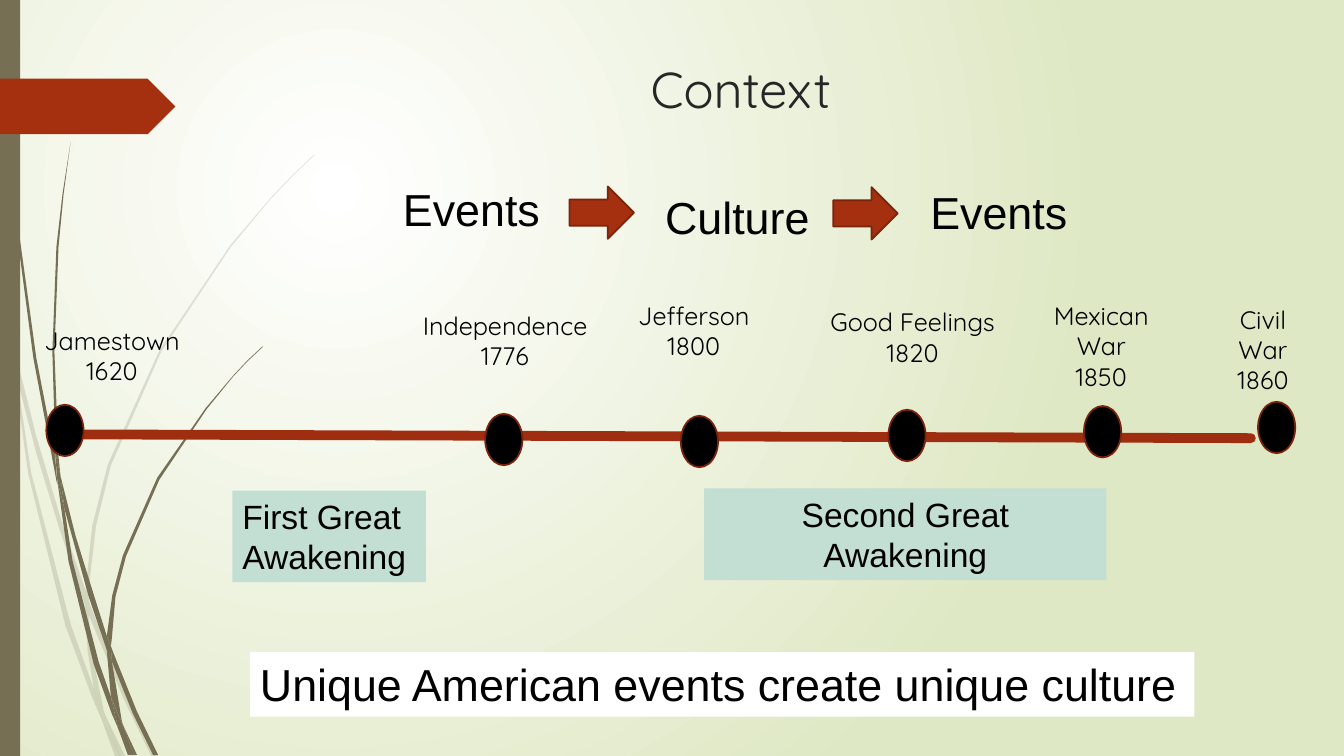
from dataclasses import dataclass

from lxml import etree
from pptx import Presentation
from pptx.dml.color import RGBColor
from pptx.enum.shapes import MSO_CONNECTOR, MSO_SHAPE
from pptx.enum.text import MSO_ANCHOR, MSO_AUTO_SIZE, PP_ALIGN
from pptx.oxml.ns import qn
from pptx.util import Pt

STRAIGHT = MSO_CONNECTOR.STRAIGHT
RECT, OVAL = MSO_SHAPE.RECTANGLE, MSO_SHAPE.OVAL
ARROW, TAG = MSO_SHAPE.RIGHT_ARROW, MSO_SHAPE.PENTAGON
LEFT, CENTER = PP_ALIGN.LEFT, PP_ALIGN.CENTER
TOP = MSO_ANCHOR.TOP
GROW, FIXED = MSO_AUTO_SIZE.SHAPE_TO_FIT_TEXT, MSO_AUTO_SIZE.NONE


@dataclass(frozen=True)
class Theme:
    heading: str = "Quicksand"
    body: str = "Arial"
    title_size: int = 36
    big_size: int = 32
    note_size: int = 24
    label_size: int = 18
    white: str = "FFFFFF"
    black: str = "000000"
    title: str = "262626"
    meadow: str = "DFE8C4"
    stem: str = "766F54"
    rust: str = "A53010"
    axis: str = "9E2E0F"
    edge: str = "7A240C"
    mint: str = "C3DED3"


class Canvas:
    def __init__(self, slide, theme):
        self.s = slide
        self.theme = theme

    def background(self, inner, outer):
        fill = self.s.background.fill
        fill.gradient()
        for stop, color in zip(fill.gradient_stops, (inner, outer)):
            stop.color.rgb = RGBColor.from_string(color)
        lin = self.s._element.find(".//" + qn("a:lin"))
        radial = etree.Element(qn("a:path"), path="circle")
        etree.SubElement(radial, qn("a:fillToRect"), l="50000", t="50000", r="100000", b="100000")
        lin.getparent().replace(lin, radial)

    def paint(self, sp, fill, line=None, width=1.25):
        sp.shadow.inherit = False
        sp.fill.solid()
        sp.fill.fore_color.rgb = RGBColor.from_string(fill)
        if line:
            sp.line.color.rgb = RGBColor.from_string(line)
            sp.line.width = Pt(width)
        else:
            sp.line.fill.background()

    def shape(self, kind, x, y, w, h, fill, line=None):
        sp = self.s.shapes.add_shape(kind, Pt(x), Pt(y), Pt(w), Pt(h))
        self.paint(sp, fill, line)

    def blade(self, outline, alpha=None):
        points = [(Pt(x), Pt(y)) for x, y in outline]
        builder = self.s.shapes.build_freeform(*points[0])
        builder.add_line_segments(points[1:], close=True)
        sp = builder.convert_to_shape()
        self.paint(sp, self.theme.stem)
        if alpha:
            clr = sp._element.spPr.find(".//" + qn("a:srgbClr"))
            etree.SubElement(clr, qn("a:alpha"), val=str(alpha * 1000))

    def line(self, x1, y1, x2, y2, color, width):
        cn = self.s.shapes.add_connector(STRAIGHT, Pt(x1), Pt(y1), Pt(x2), Pt(y2))
        cn.line.color.rgb = RGBColor.from_string(color)
        cn.line.width = Pt(width)
        spPr = cn._element.spPr
        spPr.find(qn("a:ln")).set("cap", "rnd")
        etree.SubElement(spPr, qn("a:effectLst"))

    def text(self, x, y, w, h, lines, size, font, align=LEFT, color=None, fill=None,
             wrap=False, fit=GROW):
        sp = self.s.shapes.add_textbox(Pt(x), Pt(y), Pt(w), Pt(h))
        if fill:
            self.paint(sp, fill)
        tf = sp.text_frame
        tf.word_wrap = wrap
        tf.auto_size = fit
        tf.vertical_anchor = TOP
        for i, line in enumerate(lines):
            p = tf.add_paragraph() if i else tf.paragraphs[0]
            p.alignment = align
            r = p.add_run()
            r.text = line
            r.font.name = font
            r.font.size = Pt(size)
            r.font.color.rgb = RGBColor.from_string(color or self.theme.black)


FAINT_BLADES = [
    [(7.9, 252), (6.5, 231.8), (0, 203), (0, 215.3), (7.2, 247.7)],
    [(41.8, 375.8), (60.5, 431.3), (61.2, 421.9), (44.6, 374.4), (26, 312), (10.1, 248.4),
     (12.2, 270.7), (25.9, 323.6)],
    [(66.2, 437), (63.4, 429.1), (63.4, 439.2), (88.6, 499.7), (108, 540), (111.6, 540), (91.4, 498.2)],
    [(85.7, 540), (89.3, 540), (75.6, 511.9)],
    [(67, 491.8), (50.4, 445.7), (22.3, 337.7), (12.2, 270.7), (7.9, 252), (20.2, 338.4),
     (46.8, 447.1), (66.2, 499), (72.7, 514.1), (71.3, 509)],
    [(60.5, 431.3), (62.6, 465.1), (67, 491.8), (69.1, 498.2), (75.6, 511.9), (74.2, 508.3),
     (65.5, 465.1), (63.4, 439.2), (63.4, 437.8)],
    [(63.4, 420.5), (68.6, 375.7), (79.2, 332.6), (115.2, 251.3), (164.9, 176.4), (193, 142.6),
     (208.8, 126), (224.6, 110.9), (224.6, 110.2), (208.1, 126), (193, 141.8), (164.2, 175.7),
     (113.8, 250.6), (77, 331.9), (65.9, 375.7), (61.2, 420.5), (61.2, 421.9), (63.4, 429.1)],
    [(72.7, 514.1), (82.1, 540), (85.7, 540)],
    [(63.4, 437.8), (63.4, 439.2), (63.4, 429.1), (61.2, 421.9), (60.5, 431.3)],
    [(69.1, 498.2), (67, 491.8), (71.3, 509), (72.7, 514.1), (85.7, 540), (75.6, 511.9)],
]
DARK_BLADES = [
    [(5, 79.2), (12.2, 167.8), (23.8, 255.6), (40.3, 343.4), (41, 346.3), (39.6, 329), (39.6, 326.2),
     (25.9, 255.6), (13.7, 167), (5.8, 78.5), (3.6, 34.6), (2.9, 0), (2.2, 0), (2.9, 34.6)],
    [(63.4, 426.2), (76.3, 464.4), (76.3, 455.8), (76.3, 454.3), (67, 424.8), (54, 382.9),
     (43.2, 339.8), (46.1, 363.6)],
    [(81.4, 467.3), (79.2, 461.5), (79.9, 472.3), (95, 509.8), (109.4, 539.3), (113, 539.3), (97.9, 508.3)],
    [(79.2, 497.5), (70.6, 473), (51.8, 400.3), (46.1, 363.6), (41, 343.4), (49, 401),
     (67, 474.5), (79.9, 509.8), (84.2, 519.8), (83.5, 516.2)],
    [(43.2, 339.8), (41.8, 326.2), (38.9, 251.3), (41.8, 176.4), (45.4, 139), (50.4, 101.5),
     (44.6, 139), (40.3, 176.4), (37.4, 251.3), (39.6, 323.3)],
    [(95.8, 539.3), (97.9, 539.3), (87.8, 517.7)],
    [(41, 343.4), (46.1, 363.6), (43.2, 339.8), (39.6, 323.3), (39.6, 326.2)],
    [(79.9, 455.8), (82.5, 426.2), (90, 397.4), (113.8, 342.7), (147.6, 292.3), (166.3, 269.3),
     (176.4, 258.5), (187.9, 247.7), (187.2, 247.7), (176.4, 257.8), (166.3, 268.6), (146.9, 291.6),
     (112.3, 341.3), (87.8, 396.7), (80.2, 425.3), (76.3, 454.3), (79.2, 461.5)],
    [(84.2, 519.8), (91.4, 539.3), (94.3, 539.3)],
    [(76.3, 464.4), (79.2, 497.5), (83.5, 508.3), (87.8, 517.7), (87.1, 515.5), (79.9, 472.3), (78.5, 468.7)],
    [(76.3, 464.4), (78.5, 468.7), (79.9, 472.3), (79.2, 461.5), (76.3, 454.3), (76.3, 455.8)],
    [(83.5, 508.3), (79.2, 497.5), (83.5, 516.2), (84.2, 519.8), (93.6, 539.3), (95.8, 539.3), (87.8, 517.7)],
]
MILESTONES = [
    (["Jamestown", "1620"], 22, 228.6, 115.9, 33.1, 289.1),
    (["Independence", "1776"], 286.6, 218.2, 148.3, 346.6, 295.6),
    (["Jefferson", "1800"], 445.6, 211, 100, 486.3, 297),
    (["Good Feelings", "1820"], 581, 215.6, 141.8, 634.6, 292.7),
    (["Mexican", "War", "1850"], 741.3, 211, 90.7, 774.3, 290),
    (["Civil", "War", "1860"], 874.8, 213.8, 54.7, 898.6, 287),
]
AWAKENINGS = [
    ("First Great", 166, 350.4, 138.2, LEFT),
    ("Second Great", 503, 348.9, 287.3, CENTER),
]
CHAIN = [("Events", 280.8, 126.3, 113), ("Culture", 468, 131.8, 127.4), ("Events", 657.4, 128.5, 135.4)]
CHAIN_ARROWS = [(406.8, 133.2), (595.2, 133.7)]


def main():
    prs = Presentation()
    prs.slide_width, prs.slide_height = Pt(960), Pt(540)
    th = Theme()
    c = Canvas(prs.slides.add_slide(prs.slide_layouts[6]), th)

    c.background(th.white, th.meadow)
    for outline in FAINT_BLADES:
        c.blade(outline, alpha=20)
    for outline in DARK_BLADES:
        c.blade(outline)
    c.shape(RECT, 0, 0, 14.4, 540, th.stem)
    c.shape(TAG, 0, 56.2, 125.3, 39.6, th.rust)

    c.text(178.2, 37.8, 702, 72.7, ["Context"], th.title_size, th.heading, CENTER, th.title,
           wrap=True, fit=FIXED)

    c.line(55.4, 310.3, 893.5, 313, th.axis, 7)
    for lines, x, y, w, dot_x, dot_y in MILESTONES:
        c.shape(OVAL, dot_x, dot_y, 26.6, 36.7, th.black, th.edge)
        c.text(x, y, w, 7.2 + 22 * len(lines), lines, th.label_size, th.heading, CENTER)

    for name, x, y, w, align in AWAKENINGS:
        c.text(x, y, w, 65.5, [name, "Awakening"], th.note_size, th.body, align,
               fill=th.mint, wrap=True)

    for word, x, y, w in CHAIN:
        c.text(x, y, w, 46.1, [word], th.big_size, th.body)
    for x, y in CHAIN_ARROWS:
        c.shape(ARROW, x, y, 46.1, 37.4, th.rust, th.edge)

    c.text(178.6, 465.8, 674.6, 46.1, ["Unique American events create unique culture"],
           th.big_size, th.body, fill=th.white)
    prs.save("out.pptx")


if __name__ == "__main__":
    main()
